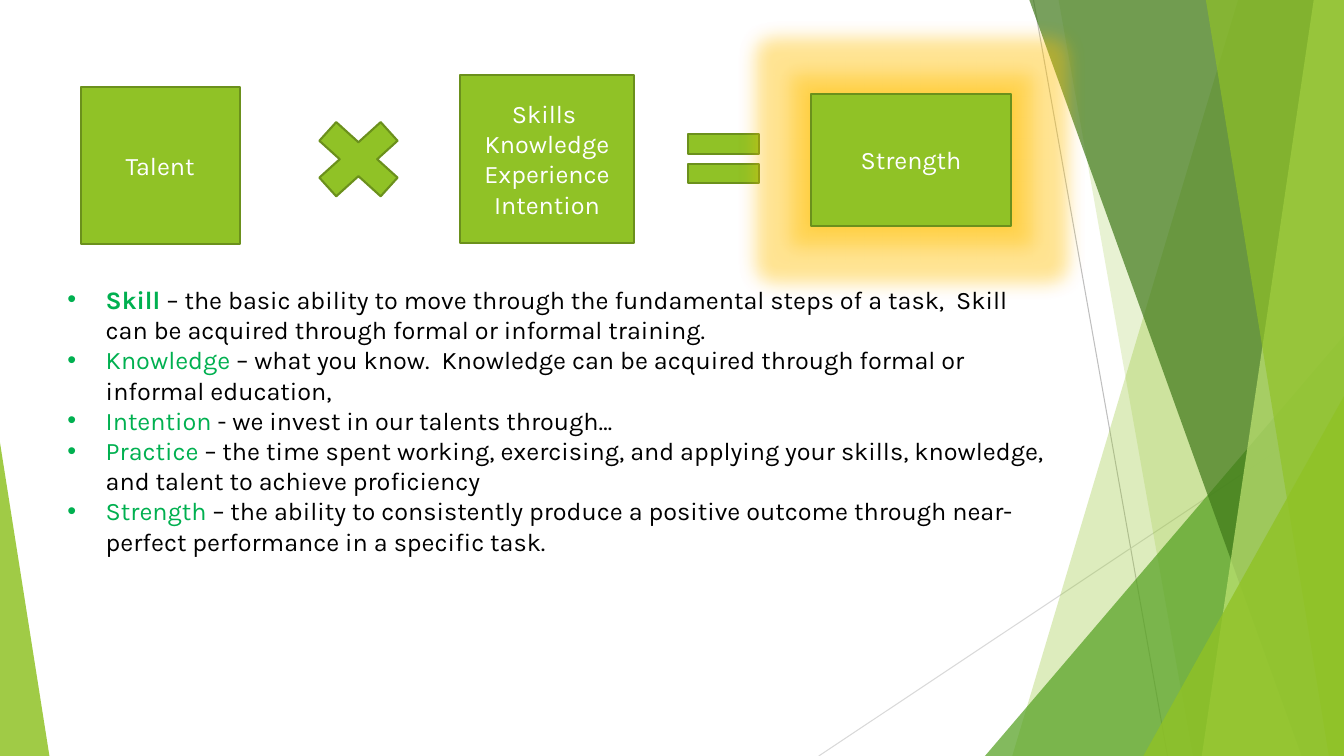
from lxml.etree import SubElement
from pptx import Presentation
from pptx.dml.color import RGBColor
from pptx.enum.shapes import MSO_CONNECTOR as Connector, MSO_SHAPE as Shape
from pptx.enum.text import MSO_ANCHOR as Anchor, MSO_AUTO_SIZE as AutoSize, PP_ALIGN as Align
from pptx.oxml.ns import qn
from pptx.util import Inches, Pt

WIDTH, HEIGHT = Inches(13.33), Inches(7.5)
FONT = "Karla"
COLORS = {
    "lime": "90C226", "leaf": "54A021", "forest": "3F7819", "pale": "C0E474",
    "outline": "6B901C", "grey": "BFBFBF", "silver": "D9D9D9",
    "glow": "FFC000", "term": "00B050", "white": "FFFFFF", "black": "000000",
}

# Positions are percentages of the slide's width and height.
# Facet: top x, bottom x, colour, opacity; each one reaches the right edge.
FACETS_BACK = [(92.12, 75.32, "lime", 30), (78.77, 88.75, "lime", 20)]
FACETS_FRONT = [(76.59, 96.85, "forest", 70), (97.75, 89.42, "pale", 70),
                (89.72, 98.87, "lime", 65)]
DEFINITIONS = [
    ("Skill ", "– the basic ability to move through the fundamental steps of a task,  "
     "Skill can be acquired through formal or informal training."),
    ("Knowledge", " – what you know.  Knowledge can be acquired through formal or "
     "informal education,"),
    ("Intention ", "- we invest in our talents through…"),
    ("Practice ", "– the time spent working, exercising, and applying your skills, "
     "knowledge, and talent to achieve proficiency"),
    ("Strength ", "– the ability to consistently produce a positive outcome through "
     "near-perfect performance in a specific task."),
]


def across(share):
    return round(WIDTH * share / 100)


def down(share):
    return round(HEIGHT * share / 100)


def area(left, top, width, height):
    return across(left), down(top), across(width), down(height)


def rgb(name):
    return RGBColor.from_string(COLORS[name])


def paint(part, color, opacity=100, outline=None):
    part.shadow.inherit = False
    part.fill.solid()
    part.fill.fore_color.rgb = rgb(color)
    if opacity < 100:
        tint = part.fill._xPr.find(qn("a:solidFill"))[0]
        SubElement(tint, qn("a:alpha"), val=str(opacity * 1000))
    if outline:
        part.line.color.rgb = rgb(outline)
        part.line.width = Pt(1.5)
    else:
        part.line.fill.background()


def write(paragraph, text, color="black", size=18, bold=False):
    run = paragraph.add_run()
    run.text = text
    run.font.name, run.font.size, run.font.bold = FONT, Pt(size), bold
    run.font.color.rgb = rgb(color)


def next_paragraph(frame, index):
    return frame.add_paragraph() if index else frame.paragraphs[0]


# Background
def add_hairline(slide, start, end, color):
    line = slide.shapes.add_connector(
        Connector.STRAIGHT, across(start[0]), down(start[1]), across(end[0]), down(end[1]))
    line.line.color.rgb = rgb(color)
    line.line.width = Pt(0.75)
    SubElement(line._element.spPr, qn("a:effectLst"))


def add_facet(slide, top_x, bottom_x, color, opacity):
    outline = slide.shapes.build_freeform(across(top_x), 0)
    outline.add_line_segments([(WIDTH, 0), (WIDTH, HEIGHT), (across(bottom_x), HEIGHT)])
    paint(outline.convert_to_shape(), color, opacity)


def add_corner(slide, left, top, width, apex, color, opacity):
    corner = slide.shapes.add_shape(
        Shape.ISOSCELES_TRIANGLE, *area(left, top, width, 100 - top))
    corner.adjustments[0] = apex
    paint(corner, color, opacity)


def add_background(slide):
    add_hairline(slide, (76.9, 0), (86.87, 100), "grey")
    add_hairline(slide, (100, 53.73), (60.92, 100), "silver")
    for facet in FACETS_BACK:
        add_facet(slide, *facet)
    add_corner(slide, 73.29, 44.4, 26.71, 1, "leaf", 72)
    for facet in FACETS_FRONT:
        add_facet(slide, *facet)
    add_corner(slide, 85.07, 52.4, 14.93, 1, "lime", 80)
    add_corner(slide, 0, 58.53, 3.68, 0, "lime", 85)


# Equation
def add_term(slide, kind, place, words=()):
    term = slide.shapes.add_shape(kind, *area(*place))
    paint(term, "lime", outline="outline")
    frame = term.text_frame
    frame.vertical_anchor = Anchor.MIDDLE
    for index, word in enumerate(words):
        paragraph = next_paragraph(frame, index)
        paragraph.alignment = Align.CENTER
        write(paragraph, word, color="white")
    return term


def add_halo(term):
    effects = term._element.spPr.find(qn("a:effectLst"))
    glow = SubElement(effects, qn("a:glow"), rad=str(Inches(0.38)))
    shade = SubElement(effects, qn("a:outerShdw"), blurRad=str(Inches(0.15)), dist="0")
    for layer in (glow, shade):
        color = SubElement(layer, qn("a:srgbClr"), val=COLORS["glow"])
        SubElement(color, qn("a:alpha"), val="40000")


# Definitions
def add_definitions(slide):
    box = slide.shapes.add_textbox(*area(4.28, 36.93, 74.72, 37.73))
    frame = box.text_frame
    frame.word_wrap = True
    frame.auto_size = AutoSize.SHAPE_TO_FIT_TEXT
    for index, (term, meaning) in enumerate(DEFINITIONS):
        paragraph = next_paragraph(frame, index)
        indent = Inches(0.38)
        layout = paragraph._p.get_or_add_pPr()
        layout.set("marL", str(indent))
        layout.set("indent", str(-indent))
        bullet_color = SubElement(layout, qn("a:buClr"))
        SubElement(bullet_color, qn("a:srgbClr"), val=COLORS["term"])
        SubElement(layout, qn("a:buFont"), typeface="Arial")
        SubElement(layout, qn("a:buChar"), char="•")
        write(paragraph, term, color="term", bold=index == 0)
        write(paragraph, meaning)


def main():
    deck = Presentation()
    deck.slide_width, deck.slide_height = WIDTH, HEIGHT
    slide = deck.slides.add_slide(deck.slide_layouts[6])
    add_background(slide)
    add_term(slide, Shape.RECTANGLE, (6, 11.47, 11.85, 20.8), ["Talent"])
    add_term(slide, Shape.MATH_EQUAL, (50.26, 15.47, 7.13, 11.07))
    strength = add_term(slide, Shape.RECTANGLE, (60.32, 12.4, 14.93, 17.47), ["Strength"])
    add_halo(strength)
    add_term(slide, Shape.MATH_MULTIPLY, (22.28, 14, 8.78, 14.13))
    add_term(slide, Shape.RECTANGLE, (34.21, 9.87, 12.98, 22.27),
             ["Skills ", "Knowledge", "Experience", "Intention"])
    add_definitions(slide)
    deck.save("out.pptx")


if __name__ == "__main__":
    main()
